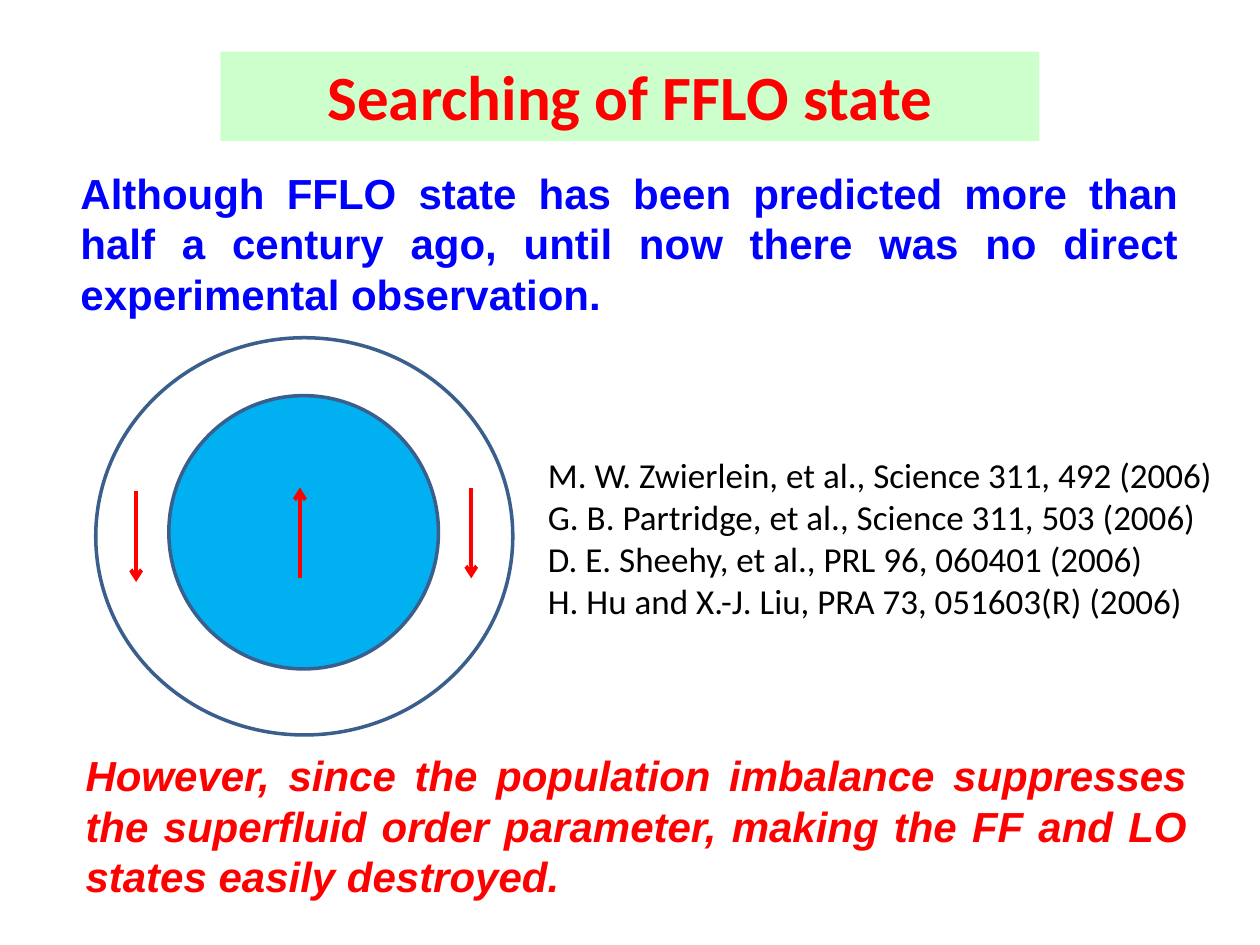
from typing import NamedTuple, Optional

from lxml.etree import SubElement
from pptx import Presentation
from pptx.dml.color import RGBColor
from pptx.enum.shapes import MSO_CONNECTOR as Connector, MSO_SHAPE as Shape
from pptx.enum.text import MSO_ANCHOR as Anchor, PP_ALIGN as Align
from pptx.oxml.ns import qn
from pptx.util import Pt

COLORS = {
    "red": "FF0000",
    "blue": "0000FF",
    "black": "000000",
    "mint": "CCFFCC",
    "sky": "00B0F0",
    "outline": "3A5F8C",
}


class Area(NamedTuple):
    left: float
    top: float
    width: float
    height: float


class Cloud(NamedTuple):
    area: Area
    fill: Optional[str] = None


class Spin(NamedTuple):
    x: float
    start: float
    end: float


CORE = Cloud(Area(96.5, 226.1, 154.1, 156.2), "sky")
SHELL = Cloud(Area(54.7, 193, 238.3, 227))
CORE_SPIN = Spin(171.4, 330.5, 278.6)
SHELL_SPINS = [Spin(77.8, 280.8, 332.6), Spin(269.3, 278.6, 330.5)]

REFERENCES = [
    "M. W. Zwierlein, et al., Science 311, 492 (2006)",
    "G. B. Partridge, et al., Science 311, 503 (2006)",
    "D. E. Sheehy, et al., PRL 96, 060401 (2006)",
    "H. Hu and X.-J. Liu, PRA 73, 051603(R) (2006)",
]


def color(name: str) -> RGBColor:
    return RGBColor.from_string(COLORS[name])


def points(*lengths: float) -> list[Pt]:
    return [Pt(length) for length in lengths]


def add_text(page, area: Area, *lines: str, size: float, ink: str,
             font: str = "Arial", bold: bool = False, italic: bool = False,
             align: Align = Align.LEFT, fill: Optional[str] = None) -> None:
    box = page.shapes.add_textbox(*points(*area))
    if fill:
        box.fill.solid()
        box.fill.fore_color.rgb = color(fill)
    frame = box.text_frame
    frame.word_wrap = True
    frame.vertical_anchor = Anchor.TOP
    for index, line in enumerate(lines):
        para = frame.add_paragraph() if index else frame.paragraphs[0]
        para.alignment = align
        span = para.add_run()
        span.text = line
        span.font.name = font
        span.font.size = Pt(size)
        span.font.bold = bold
        span.font.italic = italic
        span.font.color.rgb = color(ink)


def add_cloud(group, cloud: Cloud) -> None:
    ellipse = group.shapes.add_shape(Shape.OVAL, *points(*cloud.area))
    ellipse.shadow.inherit = False
    if cloud.fill:
        ellipse.fill.solid()
        ellipse.fill.fore_color.rgb = color(cloud.fill)
    else:
        ellipse.fill.background()
    ellipse.line.color.rgb = color("outline")
    ellipse.line.width = Pt(2)


def add_spin(group, spin: Spin) -> None:
    arrow = group.shapes.add_connector(
        Connector.STRAIGHT, *points(spin.x, spin.start, spin.x, spin.end))
    arrow.line.color.rgb = color("red")
    arrow.line.width = Pt(2.25)
    SubElement(arrow.line._get_or_add_ln(), qn("a:tailEnd"), type="arrow")
    SubElement(arrow._element.spPr, qn("a:effectLst"))


def main() -> None:
    deck = Presentation()
    deck.slide_width, deck.slide_height = points(720, 540)
    page = deck.slides.add_slide(deck.slide_layouts[6])

    add_text(page, Area(126, 29.5, 468, 51), "Searching of FFLO state",
             size=36, ink="red", font="Calibri", bold=True,
             align=Align.CENTER, fill="mint")

    trap = page.shapes.add_group_shape()
    add_cloud(trap, CORE)
    add_spin(trap, CORE_SPIN)
    add_cloud(trap, SHELL)
    for spin in SHELL_SPINS:
        add_spin(trap, spin)

    add_text(page, Area(41.8, 424.8, 643.7, 94.3),
             "However, since the population imbalance suppresses the superfluid "
             "order parameter, making the FF and LO states easily destroyed.",
             size=24, ink="red", bold=True, italic=True, align=Align.JUSTIFY)
    add_text(page, Area(306, 255.6, 414, 104.4), *REFERENCES,
             size=20, ink="black", font="Calibri")
    add_text(page, Area(38.9, 92.2, 641.5, 94.3),
             "Although FFLO state has been predicted more than half a century "
             "ago, until now there was no direct experimental observation.",
             size=24, ink="blue", bold=True, align=Align.JUSTIFY)

    deck.save("out.pptx")


if __name__ == "__main__":
    main()
